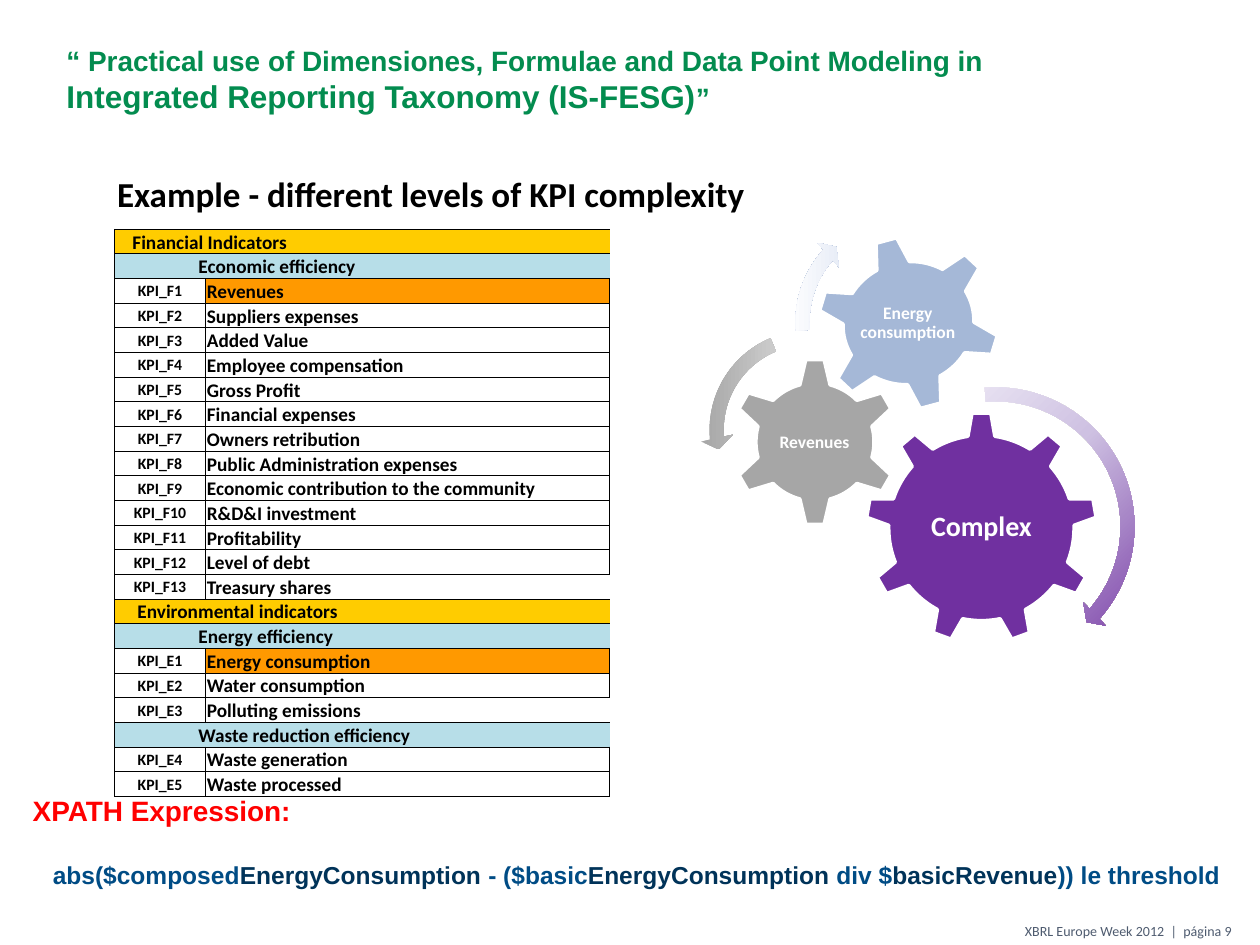
import pptx
import pptx.util
import pptx.dml.color
import pptx.enum.shapes
import pptx.enum.text
import pptx.oxml
import pptx.oxml.ns

Cm = pptx.util.Cm
Pt = pptx.util.Pt
ALIGN = pptx.enum.text.PP_ALIGN
ANCHOR = pptx.enum.text.MSO_ANCHOR
SHAPE = pptx.enum.shapes.MSO_SHAPE

GOLD, PALE_BLUE, ORANGE = "FFCC00", "B7DEE8", "FF9900"
BLUE, NAVY = "004C85", "003359"
GROUP_INDENT, SECTION_INDENT = 0.36, 1.69

# A pair is (code, indicator); a triple is (heading, fill, indent in cm).
KPI_ROWS = [
    ("Financial Indicators", GOLD, GROUP_INDENT),
    ("Economic efficiency", PALE_BLUE, SECTION_INDENT),
    ("KPI_F1", "Revenues"),
    ("KPI_F2", "Suppliers expenses"),
    ("KPI_F3", "Added Value"),
    ("KPI_F4", "Employee compensation"),
    ("KPI_F5", "Gross Profit"),
    ("KPI_F6", "Financial expenses"),
    ("KPI_F7", "Owners retribution"),
    ("KPI_F8", "Public Administration expenses"),
    ("KPI_F9", "Economic contribution to the community"),
    ("KPI_F10", "R&D&I investment"),
    ("KPI_F11", "Profitability"),
    ("KPI_F12", "Level of debt"),
    ("KPI_F13", "Treasury shares"),
    ("Environmental indicators", GOLD, GROUP_INDENT + 0.1),
    ("Energy efficiency", PALE_BLUE, SECTION_INDENT),
    ("KPI_E1", "Energy consumption"),
    ("KPI_E2", "Water consumption"),
    ("KPI_E3", "Polluting emissions"),
    ("Waste reduction efficiency", PALE_BLUE, SECTION_INDENT),
    ("KPI_E4", "Waste generation"),
    ("KPI_E5", "Waste processed"),
]
HIGHLIGHTED = {"KPI_F1", "KPI_E1"}
OPEN_RIGHT = {"KPI_F13", "KPI_E3"}


def rgb(hex_color):
    return pptx.dml.color.RGBColor.from_string(hex_color)


def write(paragraph, text, size, color="000000", font="Calibri", bold=True,
          align=None, spacing=None):
    """Append one formatted run; align and spacing apply to its paragraph."""
    run = paragraph.add_run()
    run.text = text
    run.font.name = font
    run.font.size = Pt(size)
    run.font.bold = bold
    run.font.color.rgb = rgb(color)
    if align is not None:
        paragraph.alignment = align
    if spacing is not None:
        paragraph.line_spacing = spacing


def set_margins(target, left, top, right, bottom):
    target.margin_left, target.margin_top = Cm(left), Cm(top)
    target.margin_right, target.margin_bottom = Cm(right), Cm(bottom)


def add_text_frame(slide, left, top, width, height):
    frame = slide.shapes.add_textbox(Cm(left), Cm(top), Cm(width), Cm(height)).text_frame
    frame.word_wrap = True
    return frame


def add_title(slide, text):
    title = slide.shapes.title
    title.left, title.top, title.width, title.height = Cm(2.36), Cm(3.45), Cm(21.41), Cm(0.86)
    frame = title.text_frame
    frame.auto_size = pptx.enum.text.MSO_AUTO_SIZE.NONE
    frame.vertical_anchor = ANCHOR.TOP
    set_margins(frame, 0, 0, 0, 0)
    write(frame.paragraphs[0], text, 20, align=ALIGN.LEFT, spacing=Pt(25))


def add_gear(slide, kind, box, color, rotation=0):
    gear = slide.shapes.add_shape(kind, *map(Cm, box))
    gear.shadow.inherit = False
    gear.rotation = rotation
    gear.fill.solid()
    gear.fill.fore_color.rgb = rgb(color)
    gear.line.color.rgb = rgb("FFFFFF")
    gear.line.width = Pt(2)


def add_gear_label(slide, text, size, box):
    frame = add_text_frame(slide, *box)
    frame.vertical_anchor = ANCHOR.MIDDLE
    set_margins(frame, 0.04, 0.04, 0.04, 0.04)
    write(frame.paragraphs[0], text, size, "FFFFFF", align=ALIGN.CENTER, spacing=0.9)


def add_turning_arrow(slide, kind, left, top, side, adjustments, colors, direction):
    """Draw a curved arrow with a three-colour gradient; direction is its XML element."""
    arrow = slide.shapes.add_shape(kind, Cm(left), Cm(top), Cm(side), Cm(side))
    arrow.shadow.inherit = False
    arrow.line.fill.background()
    for index, value in enumerate(adjustments):
        arrow.adjustments[index] = value
    stops = "".join(
        f'<a:gs pos="{index * 50000}"><a:srgbClr val="{color}"/></a:gs>'
        for index, color in enumerate(colors))
    gradient = pptx.oxml.parse_xml(
        f'<a:gradFill {pptx.oxml.ns.nsdecls("a")} rotWithShape="1">'
        f'<a:gsLst>{stops}</a:gsLst>{direction}</a:gradFill>')
    geometry = arrow._element.spPr.find(pptx.oxml.ns.qn("a:prstGeom"))
    geometry.addnext(gradient)


def format_cell(cell, fill=None, open_right=False, indent=0.03):
    for side in "LRTB":
        hidden = side == "R" and open_right
        paint = "<a:noFill/>" if hidden else '<a:solidFill><a:srgbClr val="000000"/></a:solidFill>'
        cell._tc.get_or_add_tcPr().append(pptx.oxml.parse_xml(
            f'<a:ln{side} {pptx.oxml.ns.nsdecls("a")} w="6350">{paint}</a:ln{side}>'))
    if fill:
        cell.fill.solid()
        cell.fill.fore_color.rgb = rgb(fill)
    else:
        cell.fill.background()
    cell.vertical_anchor = ANCHOR.MIDDLE
    set_margins(cell, indent, 0.03, 0.03, 0)


def add_kpi_table(slide):
    widths, row_height = (1.83, 8.15), 0.49
    table = slide.shapes.add_table(
        len(KPI_ROWS), 2, Cm(2.31), Cm(4.62),
        Cm(sum(widths)), Cm(row_height * len(KPI_ROWS))).table
    table.first_row = table.horz_banding = False
    for column, width in zip(table.columns, widths):
        column.width = Cm(width)
    for index, entry in enumerate(KPI_ROWS):
        table.rows[index].height = Cm(row_height)
        first, second = table.cell(index, 0), table.cell(index, 1)
        if len(entry) == 3:
            heading, fill, indent = entry
            first.merge(second)
            format_cell(first, fill, True, indent)
            format_cell(second, fill, True)
            write(first.text_frame.paragraphs[0], heading, 11)
        else:
            code, indicator = entry
            format_cell(first)
            format_cell(second, ORANGE if code in HIGHLIGHTED else None, code in OPEN_RIGHT)
            write(first.text_frame.paragraphs[0], code, 9, align=ALIGN.CENTER)
            write(second.text_frame.paragraphs[0], indicator, 11)


def add_gears(slide):
    add_gear(slide, SHAPE.GEAR_9, (17.45, 8.31, 4.67, 4.67), "7030A0")
    add_gear_label(slide, "Complex", 16, (18.39, 9.42, 2.79, 2.41))
    add_gear(slide, SHAPE.GEAR_6, (14.73, 7.21, 3.4, 3.4), "A6A6A6")
    add_gear_label(slide, "Revenues", 10, (15.57, 8.08, 1.7, 1.68))
    add_gear(slide, SHAPE.GEAR_6, (16.46, 4.75, 3.71, 3.53), "A5B8D7", 345)
    add_gear_label(slide, "Energy consumption", 10, (17.27, 5.51, 2.06, 2.01))

    add_turning_arrow(
        slide, SHAPE.CIRCULAR_ARROW, 17.07, 7.62, 5.99,
        (0.047, 2.99, 24.815, 159.382, 0.055), ("7030A0", "CEC1E2", "FFFFFF"),
        '<a:path path="circle"><a:fillToRect l="100000" t="100000"/></a:path>')
    add_turning_arrow(
        slide, SHAPE.LEFT_CIRCULAR_ARROW, 14.12, 6.48, 4.37,
        (0.065, 4.3, 104.891, 148.378, 0.075), ("A6A6A6", "DDDDDD", "FFFFFF"),
        '<a:lin ang="0" scaled="0"/>')
    add_turning_arrow(
        slide, SHAPE.CIRCULAR_ARROW, 15.85, 4.14, 4.7,
        (0.06, 3.941, 133.138, 105.082, 0.07), ("7794C3", "CAD6ED", "FFFFFF"),
        '<a:lin ang="10800000" scaled="0"/>')


def add_header(slide):
    header = add_text_frame(slide, 1.09, 0.76, 21.49, 1.7).paragraphs[0]
    for text, size in (
            ("“ Practical use of Dimensiones, Formulae and Data Point Modeling in ", 16),
            ("Integrated Reporting Taxonomy (IS-FESG)", 18),
            ("”", 16)):
        write(header, text, size, "038C4F", "Arial")


def add_expression(slide):
    frame = add_text_frame(slide, 0.41, 15.88, 24.84, 2.24)
    write(frame.paragraphs[0], "XPATH Expression:", 16, "FF0000", "Arial")
    formula = frame.add_paragraph()
    formula.space_before = Pt(18.4)
    for text, color in (
            ("abs($composed", BLUE), ("EnergyConsumption ", NAVY),
            ("- ($basic", BLUE), ("EnergyConsumption", NAVY),
            (" div $", BLUE), ("basicRevenue", NAVY), (")) le threshold", BLUE)):
        write(formula, text, 14, color, "Arial", align=ALIGN.CENTER)


def add_footer(slide):
    footer = add_text_frame(slide, 3.78, 18.47, 21.31, 0.61).paragraphs[0]
    write(footer, "XBRL Europe Week 2012  |  página 9", 8, "4E5B6F",
          bold=False, align=ALIGN.RIGHT)


def main():
    deck = pptx.Presentation()
    deck.slide_width, deck.slide_height = Cm(25.4), Cm(19.05)
    slide = deck.slides.add_slide(deck.slide_layouts[5])
    add_footer(slide)
    add_header(slide)
    add_gears(slide)
    add_title(slide, "Example - different levels of KPI complexity")
    add_expression(slide)
    add_kpi_table(slide)
    deck.save("out.pptx")


if __name__ == "__main__":
    main()
